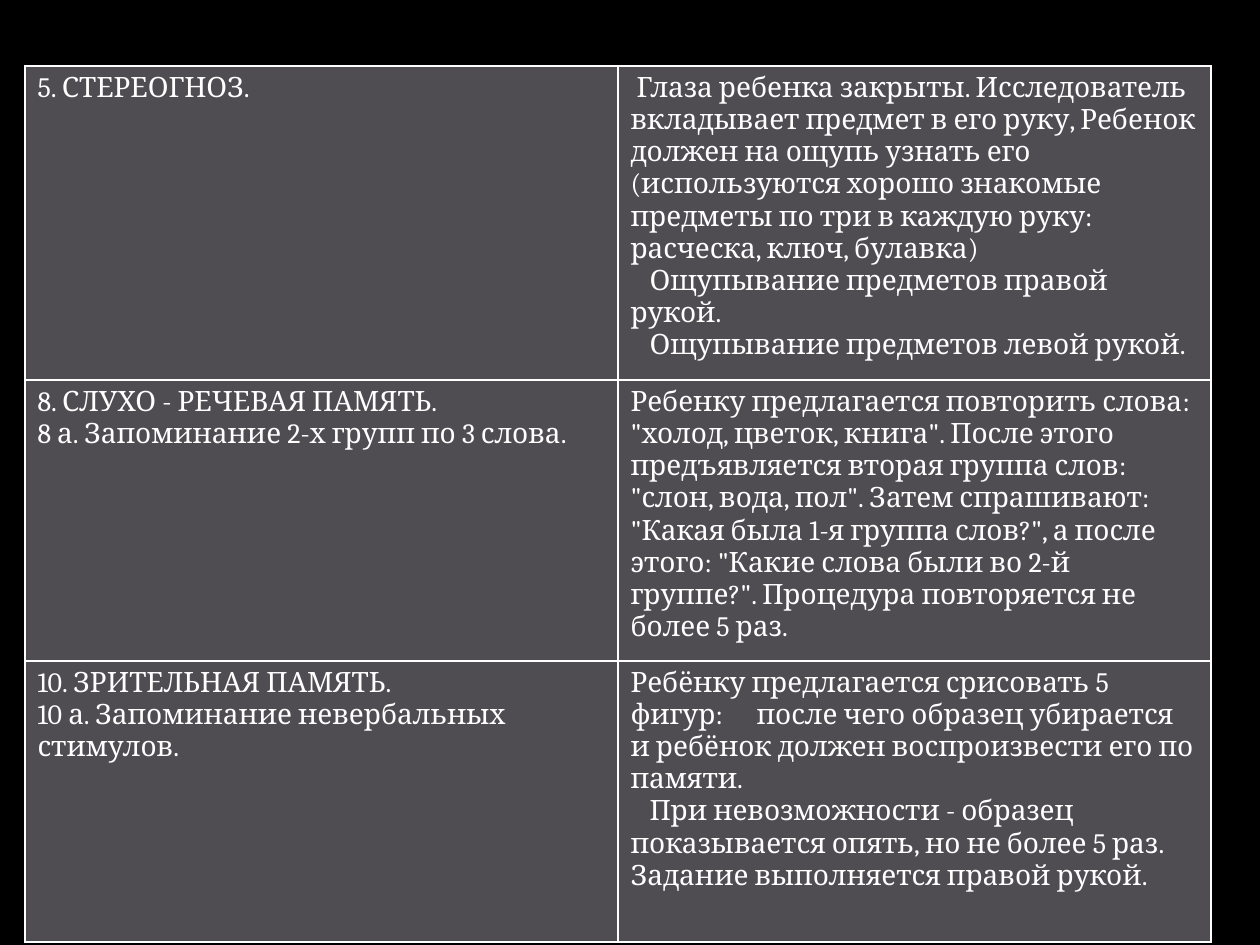
from dataclasses import dataclass

from lxml.etree import SubElement
from pptx import Presentation
from pptx.dml.color import RGBColor
from pptx.oxml.ns import qn
from pptx.table import _Cell
from pptx.text.text import _Paragraph
from pptx.util import Emu, Pt

PIXEL = 914400 // 126
FONT = "Cambria"
BLACK, WHITE, GREY = "000000", "FFFFFF", "4F4D52"
COLUMN_WIDTH = 593
TAB_STOP = 160


@dataclass(frozen=True)
class Line:
    text: str
    indent: int = 0


@dataclass(frozen=True)
class Test:
    height: int
    name: tuple[Line, ...]
    procedure: tuple[Line, ...]


TESTS = (
    Test(
        314,
        (Line("5. СТЕРЕОГНОЗ."),),
        (
            Line("Глаза ребенка закрыты. Исследователь вкладывает предмет в его руку, "
                 "Ребенок должен на ощупь узнать его (используются хорошо знакомые "
                 "предметы по три в каждую руку: расческа, ключ, булавка)", 6),
            Line("Ощупывание предметов правой рукой.", 19),
            Line("Ощупывание предметов левой рукой.", 19),
        ),
    ),
    Test(
        281,
        (Line("8. СЛУХО - РЕЧЕВАЯ ПАМЯТЬ."), Line("8 а. Запоминание 2-х групп по 3 слова.")),
        (
            Line('Ребенку предлагается повторить слова: "холод, цветок, книга". После этого '
                 'предъявляется вторая группа слов: "слон, вода, пол". Затем спрашивают: '
                 '"Какая была 1-я группа слов?", а после этого: "Какие слова были во 2-й '
                 'группе?". Процедура повторяется не более 5 раз.'),
        ),
    ),
    Test(
        281,
        (Line("10. ЗРИТЕЛЬНАЯ ПАМЯТЬ."), Line("10 а. Запоминание невербальных стимулов.")),
        (
            Line("Ребёнку предлагается срисовать 5 фигур:\tпосле чего образец убирается "
                 "и ребёнок должен воспроизвести его по памяти."),
            Line("При невозможности - образец показывается опять, но не более 5 раз. "
                 "Задание выполняется правой рукой.", 19),
        ),
    ),
)


def px(length: int) -> Emu:
    """Turn pixels into EMU."""
    return Emu(length * PIXEL)


def color(value: str) -> RGBColor:
    """Turn a hex string into a colour."""
    return RGBColor.from_string(value)


def write_line(paragraph: _Paragraph, line: Line) -> None:
    """Write one paragraph with its first-line indent and tab stop."""
    paragraph.text = line.text
    properties = paragraph._p.get_or_add_pPr()
    properties.set("marL", "0")
    properties.set("indent", str(px(line.indent)))
    if "\t" in line.text:
        tabs = SubElement(properties, qn("a:tabLst"))
        SubElement(tabs, qn("a:tab"), pos=str(px(TAB_STOP)), algn="l")
    for run in paragraph.runs:
        run.font.name = FONT
        run.font.size = Pt(16)
        run.font.bold = False
        run.font.color.rgb = color(WHITE)


def draw_cell(cell: _Cell, lines: tuple[Line, ...]) -> None:
    """Fill, border and write one table cell."""
    properties = cell._tc.get_or_add_tcPr()
    for side in ("a:lnL", "a:lnR", "a:lnT", "a:lnB"):
        border = SubElement(properties, qn(side), w=str(Pt(1)))
        fill = SubElement(border, qn("a:solidFill"))
        SubElement(fill, qn("a:srgbClr"), val=WHITE)
    cell.fill.solid()
    cell.fill.fore_color.rgb = color(GREY)
    frame = cell.text_frame
    for index, line in enumerate(lines):
        write_line(frame.add_paragraph() if index else frame.paragraphs[0], line)


def main() -> None:
    """Build the slide with the table of tests."""
    presentation = Presentation()
    presentation.slide_width, presentation.slide_height = px(1260), px(945)
    slide = presentation.slides.add_slide(presentation.slide_layouts[6])
    slide.background.fill.solid()
    slide.background.fill.fore_color.rgb = color(BLACK)
    total_height = sum(test.height for test in TESTS)
    shape = slide.shapes.add_table(
        len(TESTS), 2, px(25), px(66), px(2 * COLUMN_WIDTH), px(total_height))
    table = shape.table
    table.first_row = table.horz_banding = False
    for column in table.columns:
        column.width = px(COLUMN_WIDTH)
    for index, test in enumerate(TESTS):
        table.rows[index].height = px(test.height)
        draw_cell(table.cell(index, 0), test.name)
        draw_cell(table.cell(index, 1), test.procedure)
    presentation.save("out.pptx")


if __name__ == "__main__":
    main()
